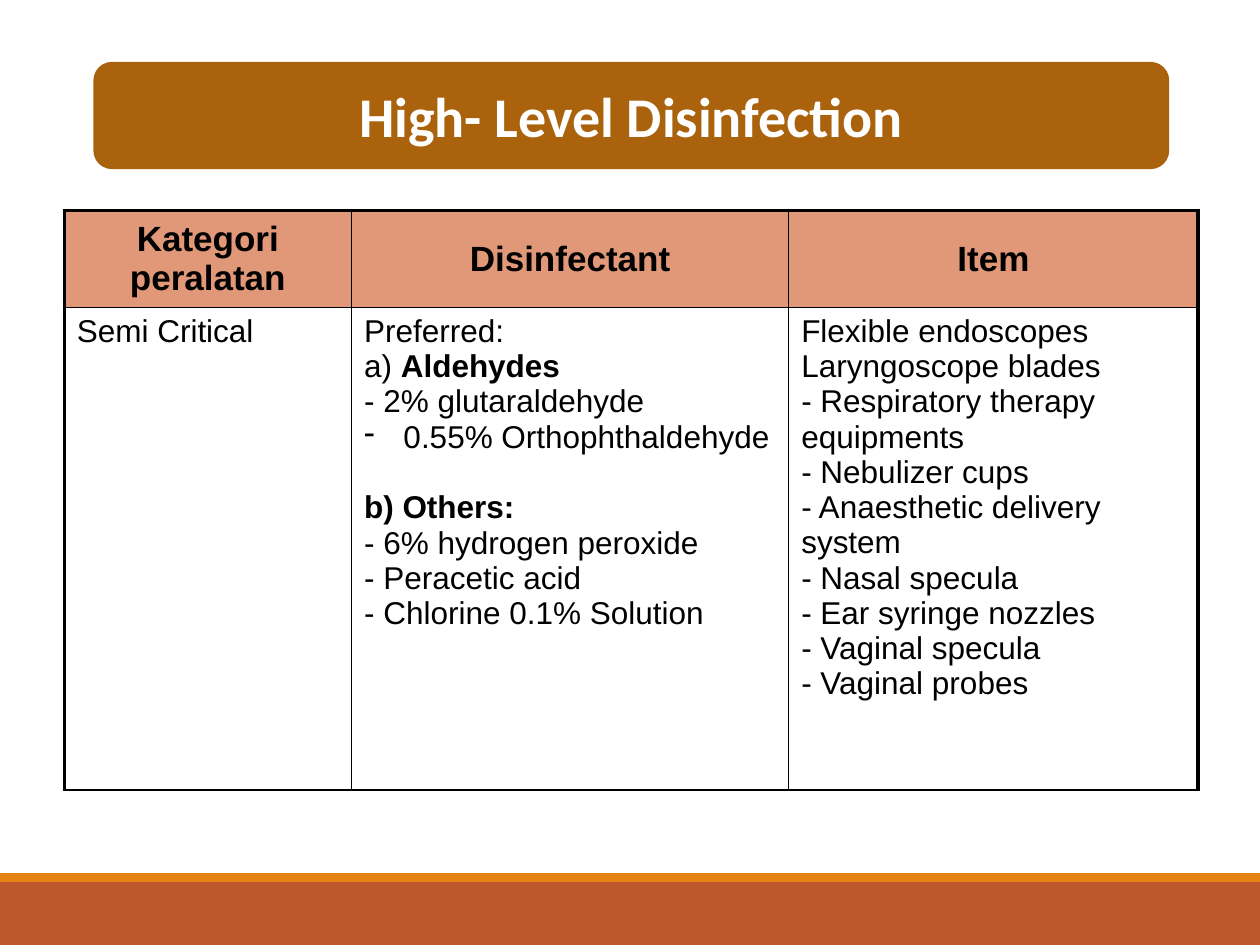
from dataclasses import dataclass

from lxml import etree
from pptx import Presentation
from pptx.dml.color import RGBColor
from pptx.enum import shapes, text
from pptx.oxml import ns
from pptx.util import Pt


@dataclass(frozen=True)
class Theme:
    footer: str = "BD582C"
    stripe: str = "E48312"
    banner: str = "AB620D"
    banner_line: str = "A9610D"
    header: str = "E09878"
    white: str = "FFFFFF"
    black: str = "000000"
    title_font: str = "Calibri"
    body_font: str = "Arial"
    title_size: float = 32
    header_size: float = 20
    body_size: float = 18
    thick: float = 2.25
    thin: float = 1


@dataclass(frozen=True)
class Box:
    left: float
    top: float
    width: float
    height: float
    fill: str
    line: str | None = None
    preset: shapes.MSO_SHAPE = shapes.MSO_SHAPE.RECTANGLE


@dataclass(frozen=True)
class Line:
    plain: str = ""
    bold: str = ""
    space_before: float = 0
    bullet_indent: float = 0


THEME = Theme()
FOOTER = Box(0, 504, 720, 36, THEME.footer)
STRIPE = Box(0, 499, 720, 5, THEME.stripe)
BANNER = Box(54, 36, 613.5, 60, THEME.banner, THEME.banner_line,
             shapes.MSO_SHAPE.ROUNDED_RECTANGLE)

TABLE_LEFT, TABLE_TOP = 36.72, 120.24
COLUMN_WIDTHS = (164.16, 249.84, 234)
ROW_HEIGHTS = (55.44, 275.76)
HEADERS = ("Kategori peralatan", "Disinfectant", "Item")
BODY = (
    (Line("Semi Critical"),),
    (
        Line("Preferred:"),
        Line("a) ", bold="Aldehydes"),
        Line("- 2% glutaraldehyde"),
        Line("0.55% Orthophthaldehyde", bullet_indent=22.5),
        Line(bold="b) Others:", space_before=20.2),
        Line("- 6% hydrogen peroxide"),
        Line("- Peracetic acid"),
        Line("- Chlorine 0.1% Solution"),
    ),
    tuple(Line(item) for item in (
        "Flexible endoscopes",
        "Laryngoscope blades",
        "- Respiratory therapy",
        "equipments",
        "- Nebulizer cups",
        "- Anaesthetic delivery system",
        "- Nasal specula",
        "- Ear syringe nozzles",
        "- Vaginal specula",
        "- Vaginal probes",
    )),
)


def add_box(slide, box: Box):
    shape = slide.shapes.add_shape(
        box.preset, Pt(box.left), Pt(box.top), Pt(box.width), Pt(box.height))
    shape.shadow.inherit = False
    shape.fill.solid()
    shape.fill.fore_color.rgb = RGBColor.from_string(box.fill)
    if box.line:
        shape.line.color.rgb = RGBColor.from_string(box.line)
        shape.line.width = Pt(1.25)
    else:
        shape.line.fill.background()
    return shape


def add_run(paragraph, words: str, size: float, bold: bool,
            font: str = THEME.body_font, color: str = THEME.black) -> None:
    run = paragraph.add_run()
    run.text = words
    for name, value in {"name": font, "size": Pt(size), "bold": bold}.items():
        setattr(run.font, name, value)
    run.font.color.rgb = RGBColor.from_string(color)


def set_bullet(paragraph, indent: float) -> None:
    properties = paragraph._p.get_or_add_pPr()
    properties.set("marL", str(Pt(indent)))
    properties.set("indent", str(-Pt(indent)))
    etree.SubElement(properties, ns.qn("a:buChar"), char="-")


def set_borders(cell, widths: dict[str, float]) -> None:
    properties = cell._tc.get_or_add_tcPr()
    # Border lines must come before the cell's fill
    for index, (side, width) in enumerate(widths.items()):
        line = etree.Element(ns.qn(f"a:ln{side}"), w=str(Pt(width)))
        fill = etree.SubElement(line, ns.qn("a:solidFill"))
        etree.SubElement(fill, ns.qn("a:srgbClr"), val=THEME.black)
        properties.insert(index, line)


def fill_header(cell, heading: str) -> None:
    cell.fill.solid()
    cell.fill.fore_color.rgb = RGBColor.from_string(THEME.header)
    cell.vertical_anchor = text.MSO_ANCHOR.MIDDLE
    paragraph = cell.text_frame.paragraphs[0]
    paragraph.alignment = text.PP_ALIGN.CENTER
    add_run(paragraph, heading, THEME.header_size, True)


def fill_body(cell, lines: tuple[Line, ...]) -> None:
    cell.fill.background()
    frame = cell.text_frame
    for index, line in enumerate(lines):
        paragraph = frame.add_paragraph() if index else frame.paragraphs[0]
        paragraph.space_before = Pt(line.space_before)
        if line.bullet_indent:
            set_bullet(paragraph, line.bullet_indent)
        for words, bold in ((line.plain, False), (line.bold, True)):
            if words:
                add_run(paragraph, words, THEME.body_size, bold)


def add_disinfectant_table(slide) -> None:
    table = slide.shapes.add_table(
        len(ROW_HEIGHTS), len(COLUMN_WIDTHS), Pt(TABLE_LEFT), Pt(TABLE_TOP),
        Pt(sum(COLUMN_WIDTHS)), Pt(sum(ROW_HEIGHTS))).table
    table.first_row = table.horz_banding = False
    for column, width in zip(table.columns, COLUMN_WIDTHS):
        column.width = Pt(width)
    for row, height in zip(table.rows, ROW_HEIGHTS):
        row.height = Pt(height)

    last = len(COLUMN_WIDTHS) - 1
    for column, (heading, lines) in enumerate(zip(HEADERS, BODY)):
        fill_header(table.cell(0, column), heading)
        fill_body(table.cell(1, column), lines)
        # Thick outer edges at left, top and right; thin lines elsewhere
        for row in range(len(ROW_HEIGHTS)):
            set_borders(table.cell(row, column), {
                "L": THEME.thick if column == 0 else THEME.thin,
                "R": THEME.thick if column == last else THEME.thin,
                "T": THEME.thick if row == 0 else THEME.thin,
                "B": THEME.thin,
            })


def main() -> None:
    presentation = Presentation()
    presentation.slide_width, presentation.slide_height = Pt(720), Pt(540)
    slide = presentation.slides.add_slide(presentation.slide_layouts[6])

    # Footer bands
    for band in (FOOTER, STRIPE):
        add_box(slide, band)

    # Title banner
    frame = add_box(slide, BANNER).text_frame
    frame.word_wrap = True
    frame.vertical_anchor = text.MSO_ANCHOR.MIDDLE
    paragraph = frame.paragraphs[0]
    paragraph.alignment = text.PP_ALIGN.CENTER
    add_run(paragraph, "High- Level Disinfection", THEME.title_size, True,
            THEME.title_font, THEME.white)

    # Disinfectants by equipment category
    add_disinfectant_table(slide)
    presentation.save("out.pptx")


if __name__ == "__main__":
    main()
